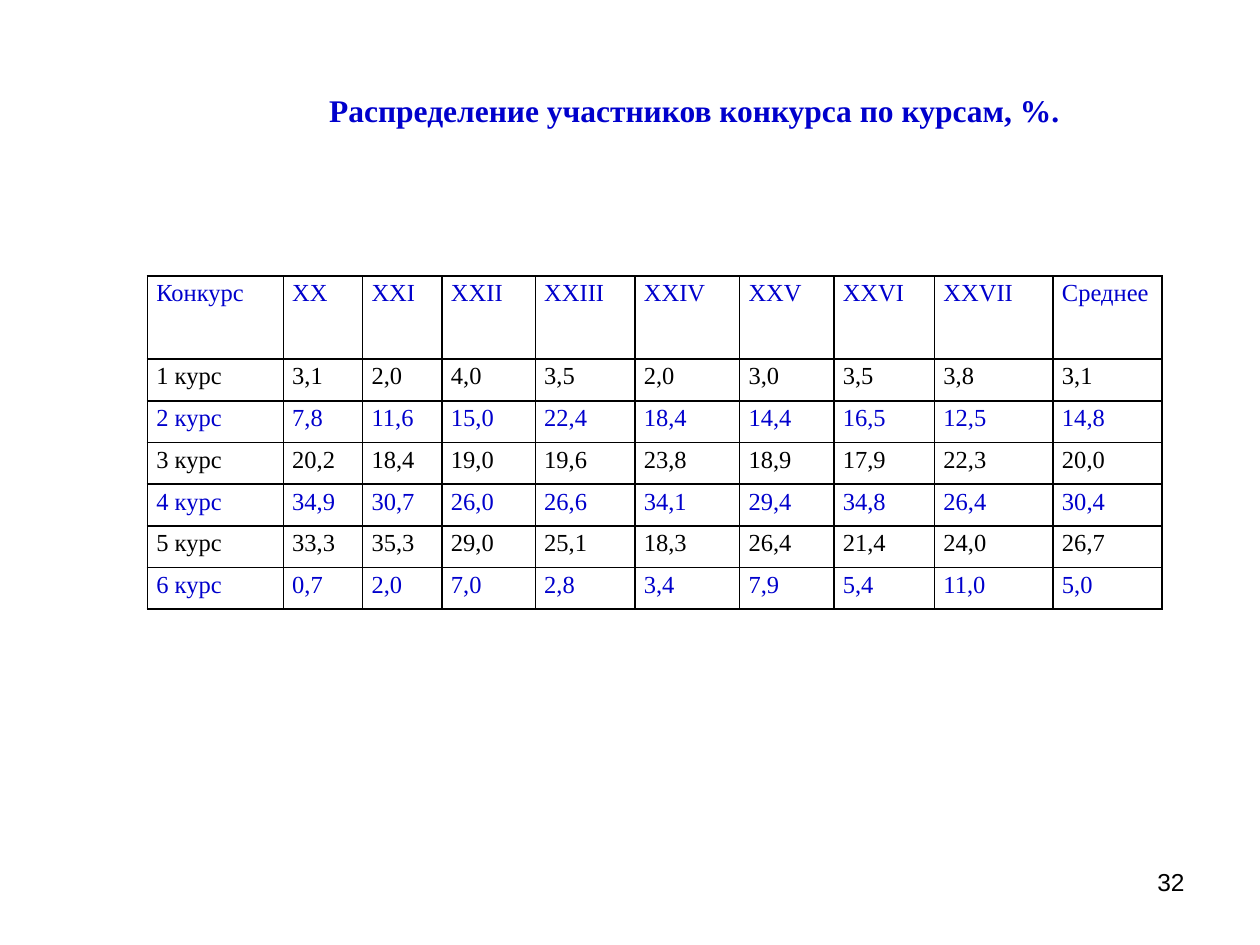
from dataclasses import dataclass

from lxml import etree
from pptx import Presentation
from pptx.dml.color import RGBColor
from pptx.enum.text import MSO_ANCHOR, PP_ALIGN
from pptx.oxml.ns import qn
from pptx.util import Cm, Pt

CENTER, RIGHT = PP_ALIGN.CENTER, PP_ALIGN.RIGHT
LEFT, JUSTIFY = PP_ALIGN.LEFT, PP_ALIGN.JUSTIFY
TOP, MIDDLE = MSO_ANCHOR.TOP, MSO_ANCHOR.MIDDLE


@dataclass(frozen=True)
class Theme:
    blue: str = "0000CC"
    black: str = "000000"
    serif: str = "Times New Roman"
    sans: str = "Arial"
    title: int = 18
    body: int = 14
    border: int = 1


THEME = Theme()

HEADER = ["Конкурс", "ХХ", "XXI", "XXII", "XXIII", "XXIV", "XXV", "XXVI",
          "XXVII", "Среднее"]
SHARES = [
    "3,1 2,0 4,0 3,5 2,0 3,0 3,5 3,8 3,1",
    "7,8 11,6 15,0 22,4 18,4 14,4 16,5 12,5 14,8",
    "20,2 18,4 19,0 19,6 23,8 18,9 17,9 22,3 20,0",
    "34,9 30,7 26,0 26,6 34,1 29,4 34,8 26,4 30,4",
    "33,3 35,3 29,0 25,1 18,3 26,4 21,4 24,0 26,7",
    "0,7 2,0 7,0 2,8 3,4 7,9 5,4 11,0 5,0",
]
COL_WIDTHS = [2.74, 1.6, 1.6, 1.88, 2.01, 2.11, 1.9, 2.03, 2.39, 2.2]
HEADER_HEIGHT, ROW_HEIGHT = 1.68, 0.84


def write(tf, text, size, color, font, align, bold=False):
    p = tf.paragraphs[0]
    p.text = text
    p.alignment = align
    p.font.size = Pt(size)
    p.font.name = font
    p.font.bold = bold
    p.font.color.rgb = RGBColor.from_string(color)
    return p


def add_text(s, box, text, size, color, font, align, anchor=TOP, bold=False):
    tf = s.shapes.add_textbox(*map(Cm, box)).text_frame
    tf.word_wrap = True
    tf.vertical_anchor = anchor
    write(tf, text, size, color, font, align, bold)


def set_borders(cell):
    tc_pr = cell._tc.get_or_add_tcPr()
    for side in ("lnL", "lnR", "lnT", "lnB"):
        ln = etree.SubElement(tc_pr, qn(f"a:{side}"), w=str(Pt(THEME.border)))
        fill = etree.SubElement(ln, qn("a:solidFill"))
        etree.SubElement(fill, qn("a:srgbClr"), val=THEME.black)


def fill_cell(cell, text, color, align):
    cell.margin_left = cell.margin_right = Cm(0.18)
    cell.margin_top = cell.margin_bottom = 0
    p = write(cell.text_frame, text, THEME.body, color, THEME.serif, align)
    p.line_spacing = 1.15
    set_borders(cell)
    cell.fill.background()


def add_shares_table(s, left, top):
    rows = [HEADER] + [[f"{i} курс", *line.split()]
                       for i, line in enumerate(SHARES, 1)]
    heights = [HEADER_HEIGHT] + [ROW_HEIGHT] * len(SHARES)
    table = s.shapes.add_table(
        len(rows), len(HEADER), Cm(left), Cm(top),
        Cm(sum(COL_WIDTHS)), Cm(sum(heights))).table
    table.first_row = table.horz_banding = False
    for col, width in zip(table.columns, COL_WIDTHS):
        col.width = Cm(width)
    for i, (values, height) in enumerate(zip(rows, heights)):
        table.rows[i].height = Cm(height)
        color = THEME.black if i % 2 else THEME.blue
        for j, text in enumerate(values):
            align = LEFT if j == len(HEADER) - 1 else JUSTIFY
            fill_cell(table.cell(i, j), text, color, align)


def main():
    prs = Presentation()
    prs.slide_width, prs.slide_height = Cm(25.4), Cm(19.05)
    s = prs.slides.add_slide(prs.slide_layouts[6])

    # Slide number
    add_text(s, (18.2, 17.35, 5.93, 1.32), "32",
             THEME.body, THEME.black, THEME.sans, RIGHT)

    # Shares by year of study
    add_shares_table(s, 2.97, 5.56)

    # Title
    add_text(s, (3.18, 1.7, 21.64, 1.02),
             "Распределение участников конкурса по курсам, %.",
             THEME.title, THEME.blue, THEME.serif, CENTER, MIDDLE, bold=True)

    prs.save("out.pptx")


if __name__ == "__main__":
    main()
